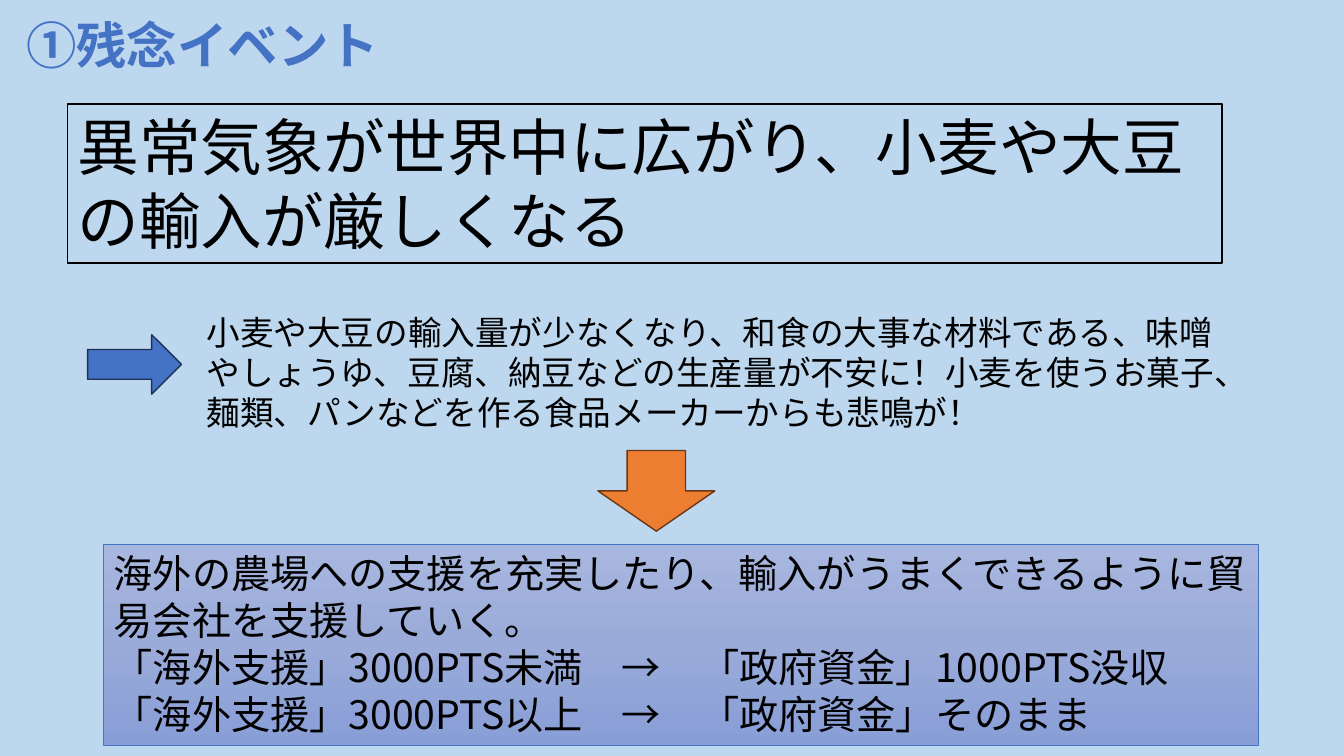
import copy

import pptx
import pptx.dml.color
import pptx.enum.shapes
import pptx.enum.text
import pptx.oxml.ns
import pptx.util
from lxml import etree

Inches = pptx.util.Inches
Pt = pptx.util.Pt
RGBColor = pptx.dml.color.RGBColor
MSO_SHAPE = pptx.enum.shapes.MSO_SHAPE
PP_ALIGN = pptx.enum.text.PP_ALIGN
qn = pptx.oxml.ns.qn

FONT = "Noto Sans CJK JP"
SKY = RGBColor(0xBD, 0xD7, 0xEE)
BLACK = RGBColor(0x00, 0x00, 0x00)
BLUE = RGBColor(0x44, 0x72, 0xC4)
NAVY = RGBColor(0x1E, 0x32, 0x56)
ORANGE = RGBColor(0xED, 0x7D, 0x31)
BROWN = RGBColor(0x68, 0x37, 0x15)
GRADIENT = (
    RGBColor(0xA8, 0xB7, 0xDF),
    RGBColor(0x9A, 0xAB, 0xD9),
    RGBColor(0x88, 0x9E, 0xD7),
)

HEADING = "①残念イベント"
EVENT = "異常気象が世界中に広がり、小麦や大豆の輸入が厳しくなる　"
IMPACT = (
    "小麦や大豆の輸入量が少なくなり、和食の大事な材料である、味噌やしょうゆ、"
    "豆腐、納豆などの生産量が不安に！小麦を使うお菓子、麺類、パンなどを作る"
    "食品メーカーからも悲鳴が！"
)
RESPONSE = (
    "海外の農場への支援を充実したり、輸入がうまくできるように貿易会社を支援していく。",
    "「海外支援」3000PTS未満　→　「政府資金」1000PTS没収",
    "「海外支援」3000PTS以上　→　「政府資金」そのまま",
)


def write(sp, lines, size, color=BLACK, bold=False, align=PP_ALIGN.LEFT, wrap=True):
    tf = sp.text_frame
    tf.text = "\n".join(lines)
    tf.word_wrap = wrap
    tf.auto_size = pptx.enum.text.MSO_AUTO_SIZE.SHAPE_TO_FIT_TEXT
    tf.vertical_anchor = pptx.enum.text.MSO_ANCHOR.TOP
    for p in tf.paragraphs:
        p.alignment = align
        for r in p.runs:
            r.font.size = Pt(size)
            r.font.bold = bold
            r.font.color.rgb = color
            r.font.name = FONT
            etree.SubElement(r.font._element, qn("a:ea"), typeface=FONT)


def add_outlined(s, kind, box, line, width, fill=None):
    sp = s.shapes.add_shape(kind, *map(Inches, box))
    sp.shadow.inherit = False
    sp.line.color.rgb = line
    sp.line.width = Pt(width)
    if fill is None:
        sp.fill.background()
    else:
        sp.fill.solid()
        sp.fill.fore_color.rgb = fill
    return sp


def fill_gradient(sp):
    sp.fill.gradient()
    sp.fill.gradient_angle = 270
    stops = sp._element.spPr.find(".//" + qn("a:gsLst"))
    stops.insert(1, copy.deepcopy(stops[0]))
    for i, (stop, color) in enumerate(zip(sp.fill.gradient_stops, GRADIENT)):
        stop.position = i / 2
        stop.color.rgb = color


def add_heading(s, box):
    sp = s.shapes.add_textbox(*map(Inches, box))
    write(sp, [HEADING], 36, BLUE, bold=True, align=PP_ALIGN.CENTER, wrap=False)


def add_event(s, box):
    sp = add_outlined(s, MSO_SHAPE.RECTANGLE, box, BLACK, 1)
    write(sp, [EVENT], 44)


def add_impact(s, box):
    left, top, width, height = box
    indent = 1.08
    arrow = (left, top + 0.28, 0.93, 0.59)
    add_outlined(s, MSO_SHAPE.RIGHT_ARROW, arrow, NAVY, 1, BLUE)
    text = (left + indent, top, width - indent, height)
    sp = s.shapes.add_textbox(*map(Inches, text))
    write(sp, [IMPACT], 24)


def add_response(s, box):
    left, top, width, height = box
    arrow_height = 0.8
    text_offset = 0.93
    arrow = (left + 4.9, top, 1.16, arrow_height)
    add_outlined(s, MSO_SHAPE.DOWN_ARROW, arrow, BROWN, 1, ORANGE)
    panel = (left, top + text_offset, width, height - text_offset)
    sp = add_outlined(s, MSO_SHAPE.RECTANGLE, panel, BLUE, 0.5)
    fill_gradient(sp)
    write(sp, RESPONSE, 28)


def main():
    prs = pptx.Presentation()
    prs.slide_width = Inches(13.33)
    prs.slide_height = Inches(7.5)
    s = prs.slides.add_slide(prs.slide_layouts[6])
    s.background.fill.solid()
    s.background.fill.fore_color.rgb = SKY
    add_heading(s, (0.16, 0.09, 3.7, 0.73))
    add_event(s, (0.67, 1.03, 11.45, 1.58))
    add_impact(s, (0.87, 3.04, 11.35, 1.31))
    add_response(s, (1.03, 4.47, 11.45, 2.92))
    prs.save("out.pptx")


if __name__ == "__main__":
    main()
